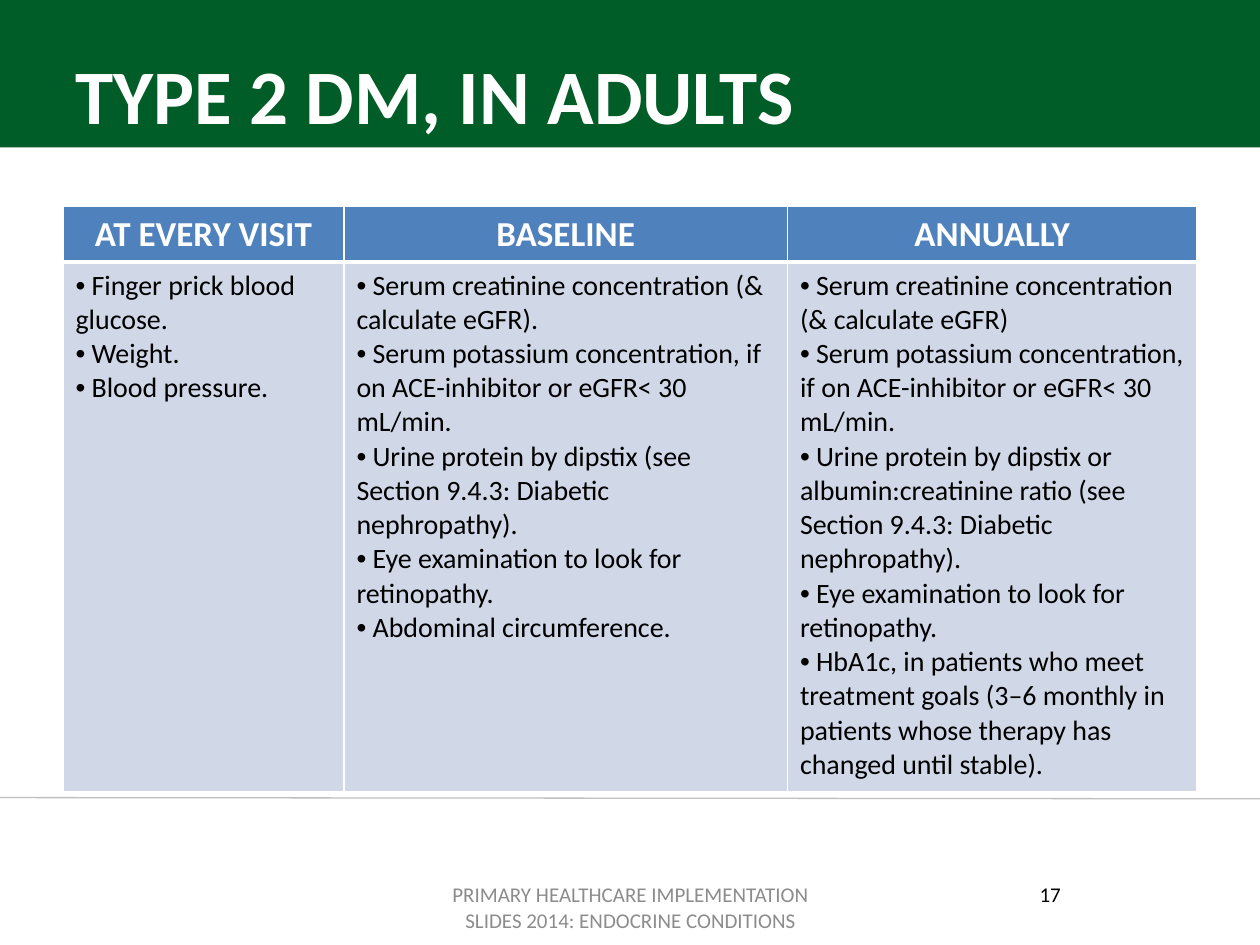
"""Build the slide on monitoring of type 2 DM in adults."""
from lxml import etree
from pptx import Presentation
from pptx.dml.color import RGBColor
from pptx.enum.shapes import MSO_CONNECTOR, MSO_SHAPE
from pptx.enum.text import MSO_ANCHOR, MSO_AUTO_SIZE, PP_ALIGN
from pptx.oxml.ns import qn
from pptx.util import Inches, Pt

LEFT, CENTER = PP_ALIGN.LEFT, PP_ALIGN.CENTER
TOP, NO_FIT = MSO_ANCHOR.TOP, MSO_AUTO_SIZE.NONE
RECT, STRAIGHT = MSO_SHAPE.RECTANGLE, MSO_CONNECTOR.STRAIGHT

TITLE = "TYPE 2 DM, IN ADULTS"
FOOTER = "PRIMARY HEALTHCARE IMPLEMENTATION SLIDES 2014: ENDOCRINE CONDITIONS"
PAGE = "17"
POTASSIUM = "Serum potassium concentration, if on ACE-inhibitor or eGFR< 30 mL/min."
EYES = "Eye examination to look for retinopathy."
COLUMNS = [
    ("AT EVERY VISIT", 2.23, [
        "Finger prick blood glucose.",
        "Weight.",
        "Blood pressure.",
    ]),
    ("BASELINE", 3.52, [
        "Serum creatinine concentration (& calculate eGFR).",
        POTASSIUM,
        "Urine protein by dipstix (see Section 9.4.3: Diabetic nephropathy).",
        EYES,
        "Abdominal circumference.",
    ]),
    ("ANNUALLY", 3.25, [
        "Serum creatinine concentration (& calculate eGFR)",
        POTASSIUM,
        "Urine protein by dipstix or albumin:creatinine ratio "
        "(see Section 9.4.3: Diabetic nephropathy).",
        EYES,
        "HbA1c, in patients who meet treatment goals (3–6 monthly in "
        "patients whose therapy has changed until stable).",
    ]),
]
ROW_HEIGHTS = [0.44, 4.2]
THEME = {
    "font": "Calibri",
    "band": "005D28", "rule": "BFBFBF", "white": "FFFFFF", "text": "000000",
    "muted": "8C8C8C", "head": "4F81BD", "body": "D0D8E8",
    "title_pt": 44, "head_pt": 20, "body_pt": 16, "foot_pt": 12,
}


def rgb(name):
    return RGBColor.from_string(THEME[name])


def add_run(p, text, size, color, bold=False, align=LEFT):
    p.alignment = align
    r = p.add_run()
    r.text = text
    r.font.name = THEME["font"]
    r.font.size = Pt(THEME[size])
    r.font.bold = bold
    r.font.color.rgb = rgb(color)


def add_bullet(p):
    pPr = p._p.get_or_add_pPr()
    pPr.set("marL", "0")
    pPr.set("indent", "0")
    etree.SubElement(pPr, qn("a:buFont")).set("typeface", "Arial")
    etree.SubElement(pPr, qn("a:buChar")).set("char", "•")


def fill_cell(cell, fill, bottom_pt):
    tcPr = cell._tc.get_or_add_tcPr()
    for side, width in (("L", 1), ("R", 1), ("T", 1), ("B", bottom_pt)):
        ln = etree.SubElement(tcPr, qn(f"a:ln{side}"), w=str(Pt(width)))
        color = etree.SubElement(etree.SubElement(ln, qn("a:solidFill")), qn("a:srgbClr"))
        color.set("val", THEME["white"])
    cell.fill.solid()
    cell.fill.fore_color.rgb = rgb(fill)


def add_frame(s):
    band = s.shapes.add_shape(RECT, 0, 0, Inches(10), Inches(1.17))
    band.shadow.inherit = False
    band.fill.solid()
    band.fill.fore_color.rgb = rgb("band")
    band.line.fill.background()
    s.shapes._spTree.insert(2, band._element)
    rule = s.shapes.add_connector(STRAIGHT, 0, Inches(6.33), Inches(10), Inches(6.34))
    rule.line.color.rgb = rgb("rule")
    rule.line.width = Pt(0.75)
    etree.SubElement(rule._element.spPr, qn("a:effectLst"))


def add_title(s):
    title = s.shapes.title
    title.left, title.top = Inches(0.5), Inches(0.3)
    title.width, title.height = Inches(9), Inches(1.25)
    tf = title.text_frame
    tf.auto_size = NO_FIT
    tf.vertical_anchor = TOP
    tf.margin_top = Inches(0.08)
    add_run(tf.paragraphs[0], TITLE, "title_pt", "white", bold=True)


def add_footer(s, text, left, width, color):
    sp = s.shapes.add_textbox(Inches(left), Inches(6.95), Inches(width), Inches(0.4))
    tf = sp.text_frame
    tf.word_wrap = True
    add_run(tf.paragraphs[0], text, "foot_pt", color, align=CENTER)


def add_schedule(s):
    frame = s.shapes.add_table(len(ROW_HEIGHTS), len(COLUMNS), Inches(0.5), Inches(1.64),
                               Inches(9), Inches(sum(ROW_HEIGHTS)))
    table = frame.table
    for row, height in zip(table.rows, ROW_HEIGHTS):
        row.height = Inches(height)
    for i, (heading, width, items) in enumerate(COLUMNS):
        table.columns[i].width = Inches(width)
        head, body = table.cell(0, i), table.cell(1, i)
        fill_cell(head, "head", 3)
        fill_cell(body, "body", 1)
        add_run(head.text_frame.paragraphs[0], heading, "head_pt", "white", True, CENTER)
        tf = body.text_frame
        for n, item in enumerate(items):
            p = tf.add_paragraph() if n else tf.paragraphs[0]
            add_bullet(p)
            add_run(p, f" {item}", "body_pt", "text")


def main():
    prs = Presentation()
    prs.slide_width, prs.slide_height = Inches(10), Inches(7.5)
    s = prs.slides.add_slide(prs.slide_layouts[5])
    add_frame(s)
    add_title(s)
    add_footer(s, FOOTER, 3.42, 3.17, "muted")
    add_footer(s, PAGE, 7.17, 2.33, "text")
    add_schedule(s)
    prs.save("out.pptx")


if __name__ == "__main__":
    main()
